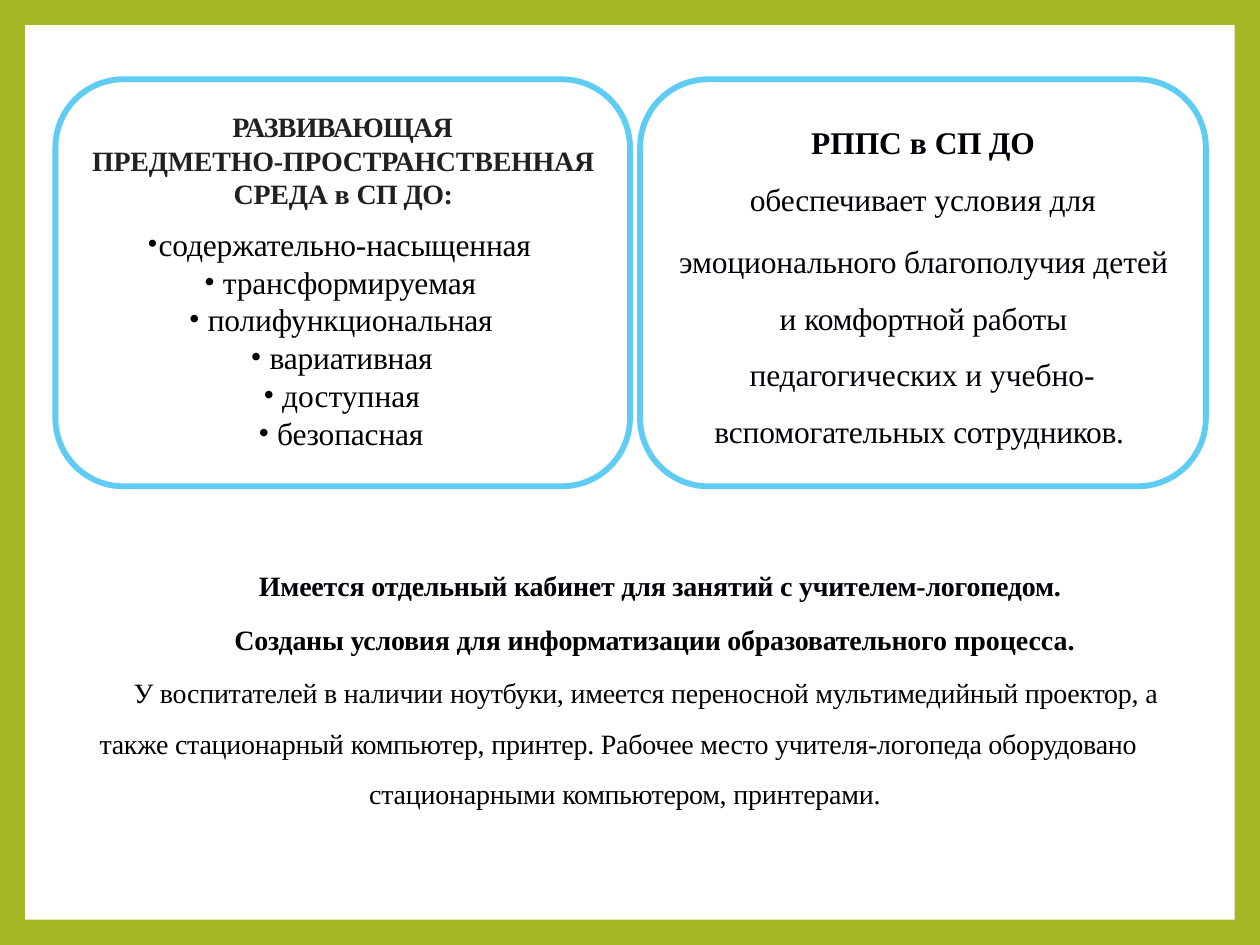
from dataclasses import dataclass

from lxml.etree import SubElement
from pptx import Presentation
from pptx.dml.color import RGBColor
from pptx.enum.shapes import MSO_SHAPE as Shape
from pptx.enum.text import MSO_AUTO_SIZE as AutoSize, PP_ALIGN as Align
from pptx.oxml.ns import qn
from pptx.util import Inches, Pt


@dataclass(frozen=True)
class Theme:
    frame: str = "A6B727"
    paper: str = "FFFFFF"
    outline: str = "5ECCF3"
    heading: str = "212121"
    ink: str = "000009"
    black: str = "000000"
    font: str = "Times New Roman"
    small: int = 16
    large: int = 18
    outline_width: float = 3.35


THEME = Theme()


@dataclass
class Para:
    pieces: list
    size: int = THEME.small
    color: str = THEME.black
    bold: bool = False
    centered: bool = False
    left: float = 0
    first: float = 0
    before: float = 0
    leading: object = None
    bullet_size: int = 0


def rgb(value):
    return RGBColor.from_string(value)


def add_panel(slide, kind, left, top, width, height):
    panel = slide.shapes.add_shape(
        kind, Inches(left), Inches(top), Inches(width), Inches(height))
    panel.shadow.inherit = False
    panel.fill.solid()
    panel.fill.fore_color.rgb = rgb(THEME.paper)
    panel.line.fill.background()
    return panel


def add_rounded_panel(slide, left, top, width, height, radius):
    panel = add_panel(slide, Shape.ROUNDED_RECTANGLE, left, top, width, height)
    panel.adjustments[0] = radius / min(width, height)
    panel.line.color.rgb = rgb(THEME.outline)
    panel.line.width = Pt(THEME.outline_width)


def add_bullet(properties, percent):
    SubElement(properties, qn("a:buSzPct"), val=str(percent * 1000))
    SubElement(properties, qn("a:buFont"), typeface=THEME.font)
    SubElement(properties, qn("a:buChar"), char="•")


def write_paragraph(paragraph, content):
    paragraph.alignment = Align.CENTER if content.centered else Align.LEFT
    paragraph.space_before = Pt(content.before)
    if content.leading:
        paragraph.line_spacing = content.leading
    properties = paragraph._p.get_or_add_pPr()
    properties.set("marL", str(Inches(content.left)))
    properties.set("indent", str(Inches(content.first)))
    if content.bullet_size:
        add_bullet(properties, content.bullet_size)
    for text, tracking in content.pieces:
        run = paragraph.add_run()
        run.text = text
        run.font.name = THEME.font
        run.font.size = Pt(content.size)
        run.font.bold = content.bold
        run.font.color.rgb = rgb(content.color)
        run._r.get_or_add_rPr().set("spc", str(round(tracking * 100)))


def add_text(slide, left, top, width, height, inset_top, contents):
    frame = slide.shapes.add_textbox(
        Inches(left), Inches(top), Inches(width), Inches(height)).text_frame
    frame.word_wrap = True
    frame.auto_size = AutoSize.SHAPE_TO_FIT_TEXT
    frame.margin_left = frame.margin_right = frame.margin_bottom = 0
    frame.margin_top = Inches(inset_top)
    for index, content in enumerate(contents):
        paragraph = frame.add_paragraph() if index else frame.paragraphs[0]
        write_paragraph(paragraph, content)


def environment_text():
    heading = dict(color=THEME.heading, bold=True, centered=True)
    qualities = [
        ("трансформируемая", 1.08, -0.1),
        ("полифункциональная", 0.96, -0.1),
        ("вариативная", 1.45, -0.1),
        ("доступная", 1.55, 0),
        ("безопасная", 1.51, -0.1),
    ]
    return [
        Para([("РАЗВИВАЮЩАЯ", -0.4)], before=0.9, **heading),
        Para([("ПРЕДМЕТНО-ПРОСТРАНСТВЕННАЯ СРЕДА в ", -0.1), ("СП ДО:", -0.3)],
             left=0.01, **heading),
        Para([("содержательно-насыщенная", -0.1)], size=THEME.large,
             left=0.57, first=-0.09, before=8.3, bullet_size=94),
    ] + [
        Para([(quality, tracking)], size=THEME.large,
             left=left, first=-0.15, bullet_size=100)
        for quality, left, tracking in qualities
    ]


def comfort_text():
    body = dict(size=THEME.large, color=THEME.ink)
    leading = Pt(32.4)
    return [
        Para([("РППС в ", 0), ("СП ДО", -0.2)],
             bold=True, centered=True, before=11.8, **body),
        Para([("обеспечивает ", -0.1), ("условия для", 0)],
             centered=True, before=10.8, **body),
        Para([("эмоционального благополучия ", -0.1), ("детей и ", 0),
              ("комфортной ", -0.2), ("работы", -0.1)],
             centered=True, left=0.01, before=2.9, leading=leading, **body),
        Para([("педагогических ", -0.1), ("и учебно-", 0),
              ("вспомогательных ", -0.1), ("сотрудников.", -0.2)],
             left=0.32, first=0.28, leading=leading, **body),
    ]


def equipment_text():
    return [
        Para([("Имеется отдельный кабинет для занятий с учителем-логопедом.", -0.1)],
             color=THEME.ink, bold=True, centered=True, left=0.27, before=0.9),
        Para([("Созданы условия для информатизации образовательного ", -0.1),
              ("процесса.", 0)], bold=True, left=1.08, before=11.7),
        Para([("У воспитателей в наличии ", -0.1), ("ноутбуки, ", -0.2),
              ("имеется переносной мультимедийный проектор, а "
               "также стационарный ", -0.1), ("компьютер, ", -0.2),
              ("принтер. Рабочее место учителя-логопеда оборудовано", -0.1)],
             left=0.01, first=0.27, before=1.9, leading=1.5),
        Para([("стационарными ", -0.1), ("компьютером, ", -0.2),
              ("принтерами.", -0.1)], left=2.15, before=9.6),
    ]


def main():
    deck = Presentation()
    deck.slide_width, deck.slide_height = Inches(10), Inches(7.5)
    slide = deck.slides.add_slide(deck.slide_layouts[6])
    slide.background.fill.solid()
    slide.background.fill.fore_color.rgb = rgb(THEME.frame)

    add_panel(slide, Shape.RECTANGLE, 0.2, 0.2, 9.6, 7.1)
    add_text(slide, 0.78, 4.5, 8.65, 1.95, 0.01, equipment_text())
    for left, width in [(0.44, 4.56), (5.08, 4.49)]:
        add_rounded_panel(slide, left, 0.63, width, 3.23, 0.54)
    add_text(slide, 0.69, 0.86, 4.06, 2.74, 0.01, environment_text())
    add_text(slide, 5.35, 0.82, 3.95, 2.76, 0.16, comfort_text())
    deck.save("out.pptx")


if __name__ == "__main__":
    main()
